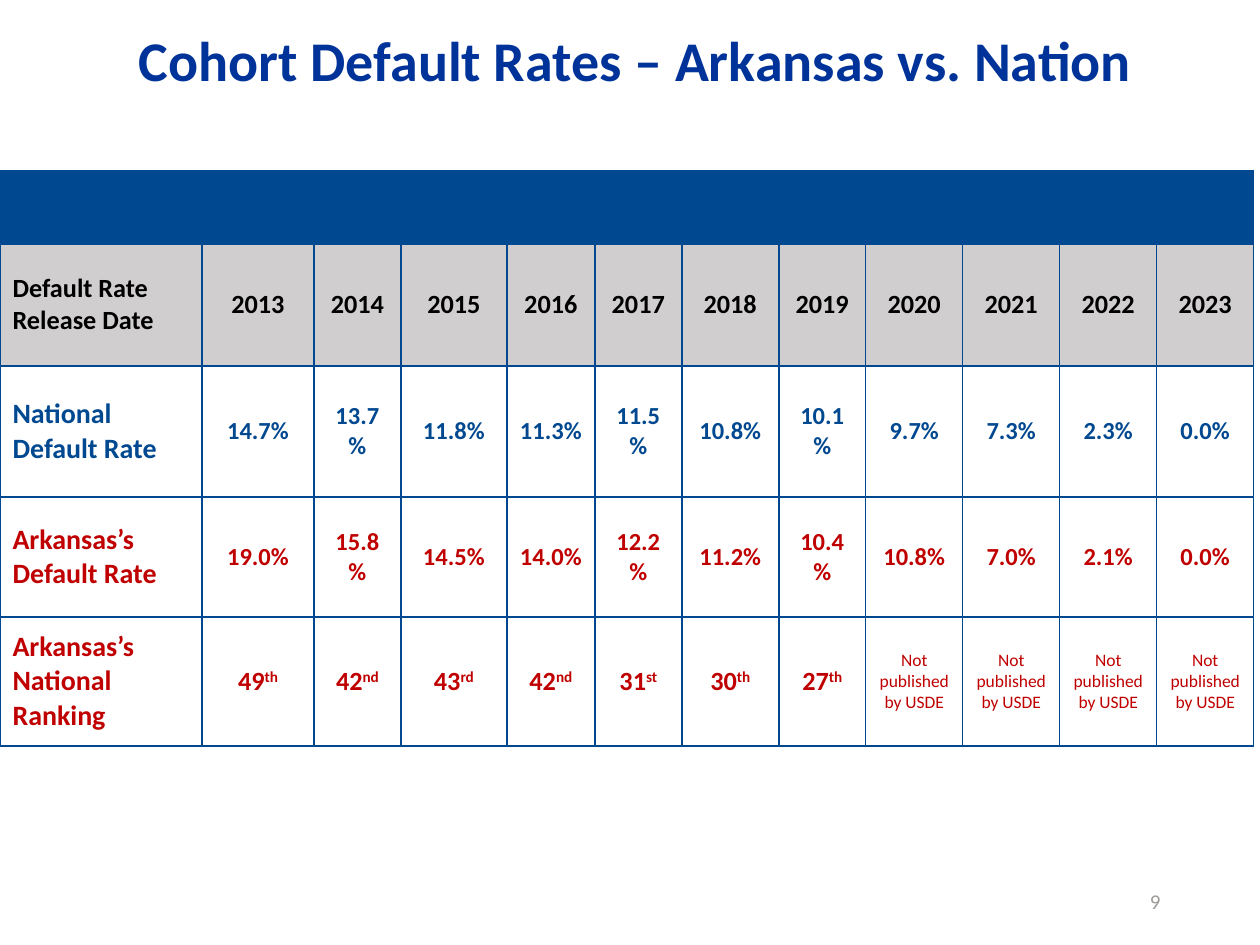
from lxml.etree import SubElement
from pptx import Presentation
from pptx.dml.color import RGBColor
from pptx.enum.text import MSO_ANCHOR as Anchor, PP_ALIGN as Align
from pptx.oxml.ns import qn
from pptx.util import Emu, Pt

EMU_PER_PX = 914400 / 126
COLORS = {
    "title": "003399",
    "blue": "004890",
    "red": "C00000",
    "black": "000000",
    "gray": "D0CECE",
    "white": "FFFFFF",
    "page_number": "9E9B98",
}
COLUMN_WIDTHS = [202, 112, 87, 106, 88, 87, 97, 87, 97, 97, 97, 97]
ROW_HEIGHTS = [73, 122, 131, 120, 129]
YEARS = [str(year) for year in range(2013, 2024)]
NATIONAL_RATES = "14.7 13.7 11.8 11.3 11.5 10.8 10.1 9.7 7.3 2.3 0.0".split()
ARKANSAS_RATES = "19.0 15.8 14.5 14.0 12.2 11.2 10.4 10.8 7.0 2.1 0.0".split()
RANKINGS = ["49th", "42nd", "43rd", "42nd", "31st", "30th", "27th"]
UNRANKED = "Not published by USDE"


def px(length):
    return Emu(round(length * EMU_PER_PX))


def color(name):
    return RGBColor.from_string(COLORS[name])


class SlideBuilder:
    font = "Calibri"

    def __init__(self, page):
        self.page = page

    def style(self, para, size, ink, bold=True, align=Align.LEFT):
        para.alignment = align
        para.font.name = self.font
        para.font.size = Pt(size)
        para.font.bold = bold
        para.font.color.rgb = color(ink)

    def text(self, words, left, top, width, height, size, ink, bold, align):
        box = self.page.shapes.add_textbox(px(left), px(top), px(width), px(height))
        frame = box.text_frame
        frame.word_wrap = True
        frame.vertical_anchor = Anchor.MIDDLE
        para = frame.paragraphs[0]
        para.text = words
        self.style(para, size, ink, bold, align)
        return para

    def table(self, left, top, widths, heights):
        frame = self.page.shapes.add_table(
            len(heights), len(widths), px(left), px(top), px(sum(widths)), px(sum(heights)))
        table = frame.table
        table.first_row = table.horz_banding = False
        for column, width in zip(table.columns, widths):
            column.width = px(width)
        for row, height in zip(table.rows, heights):
            row.height = px(height)
        return table

    def cell(self, cell, fill):
        """Gives a cell its borders, fill and middle anchor."""
        cell.vertical_anchor = Anchor.MIDDLE
        properties = cell._tc.get_or_add_tcPr()
        for side in ("lnL", "lnR", "lnT", "lnB"):
            line = SubElement(properties, qn(f"a:{side}"), w=str(Pt(1)))
            ink = SubElement(line, qn("a:solidFill"))
            SubElement(ink, qn("a:srgbClr"), val=COLORS["blue"])
        cell.fill.solid()
        cell.fill.fore_color.rgb = color(fill)

    def cell_text(self, cell, words, size, ink, bold=True, align=Align.CENTER):
        cell.text_frame.text = words
        for para in cell.text_frame.paragraphs:
            self.style(para, size, ink, bold, align)

    def ranking(self, cell, ordinal):
        """Writes an ordinal with its two-letter ending raised."""
        self.cell_text(cell, ordinal[:-2], 15, "red")
        ending = cell.text_frame.paragraphs[0].add_run()
        ending.text = ordinal[-2:]
        ending.font._element.set("baseline", "30000")


def main():
    deck = Presentation()
    deck.slide_width, deck.slide_height = px(1260), px(945)
    builder = SlideBuilder(deck.slides.add_slide(deck.slide_layouts[6]))

    title = builder.text("Cohort Default Rates – Arkansas vs. Nation",
                         41, 21, 1189, 84, 32, "title", True, Align.CENTER)
    title.line_spacing = 0.9

    table = builder.table(0, 171, COLUMN_WIDTHS, ROW_HEIGHTS)
    for row, fill in enumerate(["blue", "gray", "white", "white", "white"]):
        for column in range(len(COLUMN_WIDTHS)):
            builder.cell(table.cell(row, column), fill)
    table.cell(0, 0).merge(table.cell(0, 9))

    text_rows = [
        ("Default Rate Release Date", 15, YEARS, 15, "black"),
        ("National Default Rate", 16, [f"{rate}%" for rate in NATIONAL_RATES], 14, "blue"),
        ("Arkansas’s Default Rate", 16, [f"{rate}%" for rate in ARKANSAS_RATES], 14, "red"),
        ("Arkansas’s\nNational Ranking", 16, [], 15, "red"),
    ]
    for row, (label, label_size, values, size, ink) in enumerate(text_rows, start=1):
        builder.cell_text(table.cell(row, 0), label, label_size, ink, align=Align.LEFT)
        for column, value in enumerate(values, start=1):
            builder.cell_text(table.cell(row, column), value, size, ink)

    for column in range(1, len(COLUMN_WIDTHS)):
        cell = table.cell(4, column)
        if column <= len(RANKINGS):
            builder.ranking(cell, RANKINGS[column - 1])
        else:
            builder.cell_text(cell, UNRANKED, 10, "red", bold=False)

    builder.text("9", 890, 876, 283, 50, 12, "page_number", False, Align.RIGHT)
    deck.save("out.pptx")


if __name__ == "__main__":
    main()
